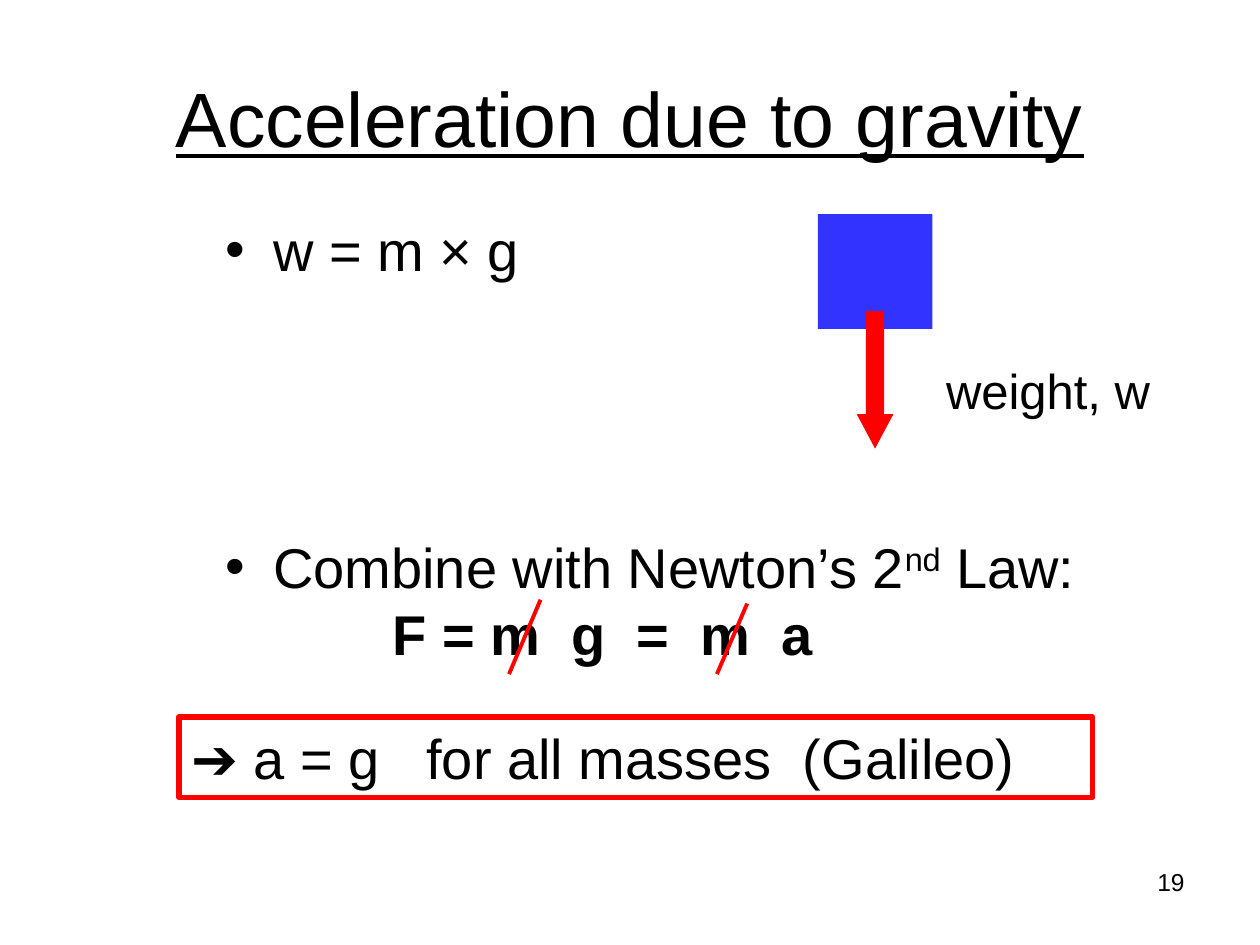
from dataclasses import dataclass

from lxml.etree import SubElement
from pptx import Presentation
from pptx.dml.color import RGBColor
from pptx.enum.shapes import MSO_CONNECTOR, MSO_SHAPE
from pptx.enum.text import MSO_ANCHOR, PP_ALIGN
from pptx.oxml.ns import qn
from pptx.util import Inches, Pt


@dataclass(frozen=True)
class Theme:
    font: str = "Arial"
    ink: RGBColor = RGBColor(0x00, 0x00, 0x00)
    block: RGBColor = RGBColor(0x33, 0x33, 0xFF)
    accent: RGBColor = RGBColor(0xFF, 0x00, 0x00)
    title: int = 44
    body: int = 32
    label: int = 28
    number: int = 14


THEME = Theme()


def add_text(p, text, size=THEME.body, bold=False, underline=False,
             superscript=False, align=PP_ALIGN.LEFT):
    p.alignment = align
    r = p.add_run()
    r.text = text
    r.font.name = THEME.font
    r.font.size = Pt(size)
    r.font.bold = bold
    r.font.underline = underline
    r.font.color.rgb = THEME.ink
    if superscript:
        r._r.get_or_add_rPr().set("baseline", "30000")


def set_indent(p, left, first=0, bullet=None):
    pPr = p._p.get_or_add_pPr()
    pPr.set("marL", str(Inches(left)))
    pPr.set("indent", str(Inches(first)))
    if bullet:
        SubElement(pPr, qn("a:buFont"), typeface=THEME.font)
        SubElement(pPr, qn("a:buChar"), char=bullet)


prs = Presentation()
prs.slide_width, prs.slide_height = Inches(10), Inches(7.5)
slide = prs.slides.add_slide(prs.slide_layouts[6])
shapes = slide.shapes

# Title
tf = shapes.add_textbox(Inches(0.5), Inches(0.3), Inches(9), Inches(1.25)).text_frame
tf.word_wrap = True
tf.vertical_anchor = MSO_ANCHOR.MIDDLE
add_text(tf.paragraphs[0], "Acceleration due to gravity", size=THEME.title,
         underline=True, align=PP_ALIGN.CENTER)

# Bullets and equation
tf = shapes.add_textbox(Inches(1.69), Inches(1.66), Inches(7.54), Inches(3.8)).text_frame
tf.word_wrap = True
p = tf.paragraphs[0]
add_text(p, "w = m × g")
set_indent(p, 0.38, -0.38, bullet="•")

p = tf.add_paragraph()
p.space_before = Pt(143)
add_text(p, "Combine with Newton’s 2")
add_text(p, "nd", superscript=True)
add_text(p, " Law:")
set_indent(p, 0.38, -0.38, bullet="•")

p = tf.add_paragraph()
add_text(p, "F = m  g  =  m  a", bold=True)
set_indent(p, 1.33)

# Falling block with its weight arrow
block = shapes.add_shape(MSO_SHAPE.RECTANGLE, Inches(6.49), Inches(1.7),
                         Inches(0.91), Inches(0.91))
arrow = shapes.add_shape(MSO_SHAPE.DOWN_ARROW, Inches(6.8), Inches(2.47),
                         Inches(0.29), Inches(1.09))
arrow.adjustments[0], arrow.adjustments[1] = 0.5, 0.94
for sp, color in ((block, THEME.block), (arrow, THEME.accent)):
    sp.shadow.inherit = False
    sp.fill.solid()
    sp.fill.fore_color.rgb = color
    sp.line.fill.background()

tf = shapes.add_textbox(Inches(7.41), Inches(2.81), Inches(1.82), Inches(0.57)).text_frame
tf.word_wrap = False
add_text(tf.paragraphs[0], "weight, w", size=THEME.label)

# Slide number
tf = shapes.add_textbox(Inches(7.17), Inches(6.83), Inches(2.33), Inches(0.52)).text_frame
tf.word_wrap = True
add_text(tf.paragraphs[0], "19", size=THEME.number, align=PP_ALIGN.RIGHT)

# Strokes that cancel the two masses
for x1, y1, x2, y2 in ((4.29, 4.76, 4.04, 5.35), (5.93, 4.79, 5.69, 5.35)):
    stroke = shapes.add_connector(MSO_CONNECTOR.STRAIGHT, Inches(x1), Inches(y1),
                                  Inches(x2), Inches(y2))
    stroke.line.color.rgb = THEME.accent
    stroke.line.width = Pt(2.25)
    SubElement(stroke._element.spPr, qn("a:effectLst"))

# Boxed conclusion
result = shapes.add_shape(MSO_SHAPE.RECTANGLE, Inches(1.42), Inches(5.69),
                          Inches(7.25), Inches(0.64))
result.shadow.inherit = False
result.fill.background()
result.line.color.rgb = THEME.accent
result.line.width = Pt(3)
tf = result.text_frame
tf.word_wrap = True
tf.vertical_anchor = MSO_ANCHOR.TOP
add_text(tf.paragraphs[0], "➔ a = g   for all masses  (Galileo)")

prs.save("out.pptx")
